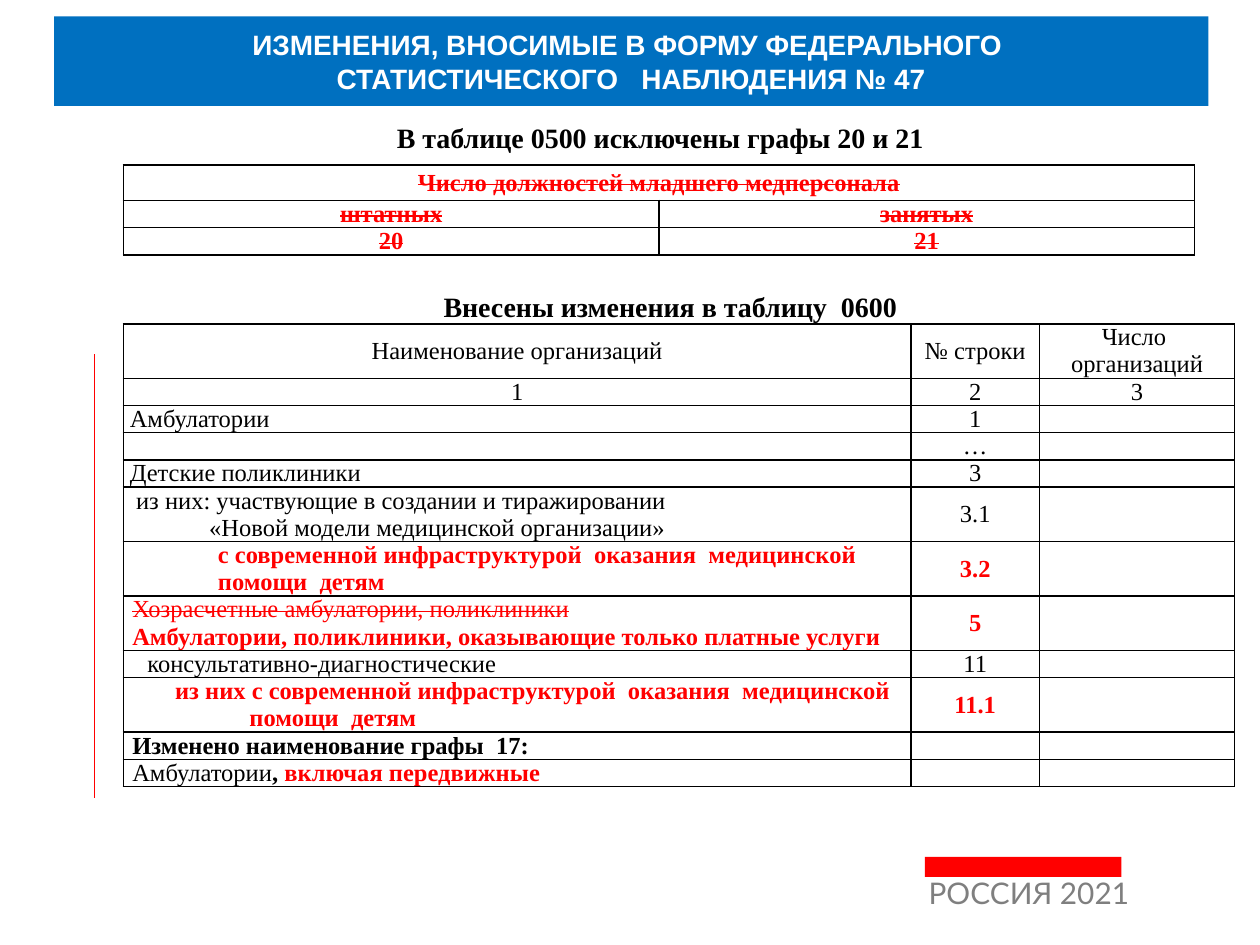
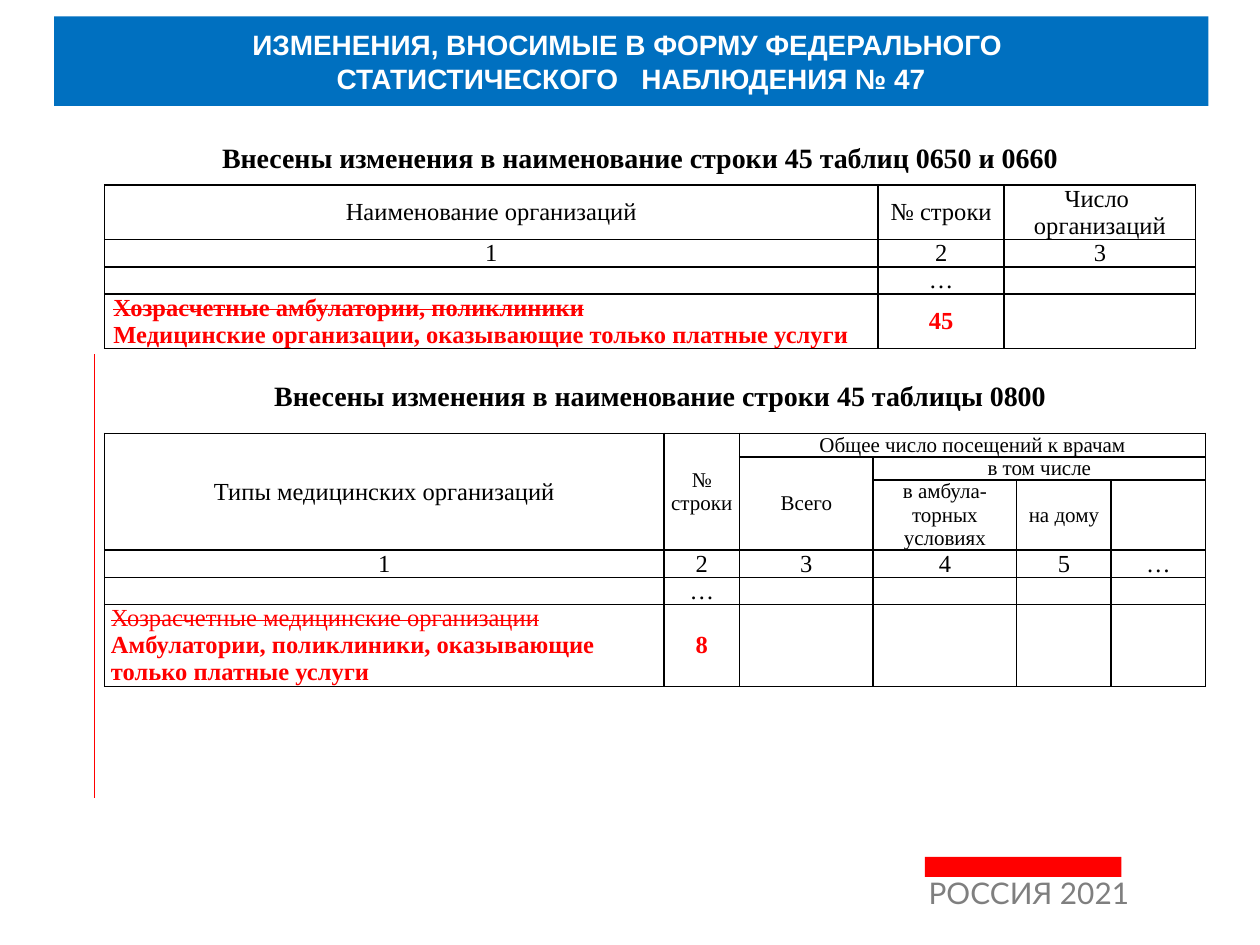
from dataclasses import dataclass
from lxml import etree
from pptx import Presentation
from pptx.dml.color import RGBColor
from pptx.enum.shapes import MSO_CONNECTOR, MSO_SHAPE
from pptx.enum.text import MSO_ANCHOR, MSO_AUTO_SIZE, PP_ALIGN
from pptx.oxml.ns import qn
from pptx.util import Inches, Pt

LEFT, CENTER = PP_ALIGN.LEFT, PP_ALIGN.CENTER
MIDDLE = MSO_ANCHOR.MIDDLE
NO_AUTOFIT = MSO_AUTO_SIZE.NONE
RECTANGLE = MSO_SHAPE.RECTANGLE
STRAIGHT = MSO_CONNECTOR.STRAIGHT


@dataclass(frozen=True)
class Theme:
    blue: str = "0070C0"
    red: str = "FF0000"
    black: str = "000000"
    white: str = "FFFFFF"
    gray: str = "7F7F7F"
    title_font: str = "Arial"
    body_font: str = "Times New Roman"
    footer_font: str = "Lato"
    title_size: float = 16
    footer_size: float = 17
    cell_size: float = 14
    small_size: float = 12
    empty_size: float = 10
    line_pitch: float = 1.11
    rule_width: float = 0.75
    border_width: float = 1


THEME = Theme()

# Text styles used inside the tables: colour, bold, struck out
STYLES = {
    "plain": (THEME.black, False, False),
    "strong": (THEME.black, True, False),
    "added": (THEME.red, True, False),
    "removed": (THEME.red, False, True),
    "removed_bold": (THEME.red, True, True),
}

# Least row heights; rows grow to fit their text
ONE_LINE, TWO_LINES, THREE_LINES = 0.21, 0.43, 0.64
SMALL_LINE, SMALL_THREE_LINES = 0.18, 0.55


@dataclass
class Line:
    spans: list
    indent: float = 0


@dataclass
class Cell:
    lines: list
    align: PP_ALIGN = CENTER
    margin: float = 0.05
    size: float = THEME.cell_size


def line(text, style="plain", indent=0):
    return Line([(text, style)], indent)


def label(*lines, margin=0.07):
    return Cell(list(lines), LEFT, margin)


def centered(*texts, style="plain", **format_values):
    return Cell([line(text, style) for text in texts], **format_values)


def small(*texts, margin=0.05):
    return centered(*texts, margin=margin, size=THEME.small_size)


def numbers(*texts):
    return [centered(text) for text in texts]


# ---- Shared helpers ----
def apply(target, values):
    for name, value in values.items():
        setattr(target, name, value)


def inches(box):
    return [Inches(value) for value in box]


def place(shape, box):
    apply(shape, dict(zip(("left", "top", "width", "height"), inches(box))))


def add_span(para, text, font, size, color, bold=False):
    span = para.add_run()
    span.text = text
    apply(span.font, {"name": font, "size": Pt(size), "bold": bold})
    span.font.color.rgb = RGBColor.from_string(color)
    return span


def set_fill(shape, color):
    shape.fill.solid()
    shape.fill.fore_color.rgb = RGBColor.from_string(color)
    shape.line.fill.background()


# ---- Page frame ----
def add_title(page, box):
    title = page.shapes.title
    place(title, box)
    set_fill(title, THEME.blue)
    frame = title.text_frame
    apply(frame, {"word_wrap": True, "auto_size": NO_AUTOFIT, "vertical_anchor": MIDDLE})
    for index, text in enumerate(("ИЗМЕНЕНИЯ, ВНОСИМЫЕ В ФОРМУ ФЕДЕРАЛЬНОГО ",
                                  "СТАТИСТИЧЕСКОГО   НАБЛЮДЕНИЯ № 47")):
        para = frame.add_paragraph() if index else frame.paragraphs[0]
        para.alignment = CENTER
        add_span(para, text, THEME.title_font, THEME.title_size, THEME.white, True)


def add_footer(page, box):
    left, top, width, height = box
    # Red band above the caption
    band = page.shapes.add_shape(RECTANGLE, *inches((left + 0.07, top, 1.56, 0.16)))
    band.shadow.inherit = False
    set_fill(band, THEME.red)
    # Caption
    caption = page.placeholders[1]
    place(caption, (left, top + 0.15, width, height - 0.15))
    apply(caption.text_frame, {"word_wrap": True, "auto_size": NO_AUTOFIT})
    para = caption.text_frame.paragraphs[0]
    apply(para, {"alignment": LEFT, "line_spacing": 0.8})
    add_span(para, "РОССИЯ 2021", THEME.footer_font, THEME.footer_size, THEME.gray)


def add_side_rule(page, left, top, bottom):
    x = Inches(left)
    rule = page.shapes.add_connector(STRAIGHT, x, Inches(top), x, Inches(bottom))
    rule.line.color.rgb = RGBColor.from_string(THEME.red)
    rule.line.width = Pt(THEME.rule_width)
    etree.SubElement(rule._element.spPr, qn("a:effectLst"))


def add_page(deck):
    page = deck.slides.add_slide(deck.slide_layouts[0])
    add_title(page, (0.43, 0.13, 9.16, 0.71))
    add_footer(page, (7.27, 6.8, 1.88, 0.62))
    add_side_rule(page, 0.75, 2.81, 6.33)
    return page


def add_heading(page, text, left, top):
    box = page.shapes.add_textbox(*inches((left, top, 8.98, 0.32)))
    frame = box.text_frame
    apply(frame, {"word_wrap": True, "vertical_anchor": MIDDLE})
    para = frame.paragraphs[0]
    para.alignment = CENTER
    add_span(para, text, THEME.body_font, THEME.title_size, THEME.black, True)


# ---- Tables ----
def add_borders(cell):
    properties = cell._tc.get_or_add_tcPr()
    for index, side in enumerate(("lnL", "lnR", "lnT", "lnB")):
        border = etree.Element(qn(f"a:{side}"), w=str(Pt(THEME.border_width)))
        fill = etree.SubElement(border, qn("a:solidFill"))
        etree.SubElement(fill, qn("a:srgbClr"), val=THEME.black)
        properties.insert(index, border)


def write_cell(cell, content):
    margin = Inches(content.margin if content else 0)
    apply(cell, {"margin_left": margin, "margin_right": margin, "margin_top": 0,
                 "margin_bottom": 0, "vertical_anchor": MIDDLE})
    cell.fill.background()
    add_borders(cell)
    frame = cell.text_frame
    if not content:
        etree.SubElement(frame.paragraphs[0]._p, qn("a:endParaRPr"),
                         sz=str(int(THEME.empty_size * 100)))
        return
    for index, item in enumerate(content.lines):
        para = frame.add_paragraph() if index else frame.paragraphs[0]
        apply(para, {"alignment": content.align,
                     "line_spacing": Pt(content.size * THEME.line_pitch)})
        if item.indent:
            para._p.get_or_add_pPr().set("marL", str(Inches(item.indent)))
        for text, style in item.spans:
            color, bold, struck = STYLES[style]
            span = add_span(para, text, THEME.body_font, content.size, color, bold)
            if struck:
                span._r.get_or_add_rPr().set("strike", "sngStrike")


def add_grid(page, left, top, widths, heights, rows, merges=()):
    box = inches((left, top, sum(widths), sum(heights)))
    table = page.shapes.add_table(len(heights), len(widths), *box).table
    apply(table, {"first_row": False, "horz_banding": False})
    for column, width in zip(table.columns, widths):
        column.width = Inches(width)
    for row, height in zip(table.rows, heights):
        row.height = Inches(height)
    for first_row, first_column, last_row, last_column in merges:
        table.cell(first_row, first_column).merge(table.cell(last_row, last_column))
    for row, contents in zip(table.rows, rows):
        for cell, content in zip(row.cells, contents):
            write_cell(cell, content)


def organization_header():
    return [
        [centered("Наименование организаций"), centered("№ строки"),
         centered("Число ", "организаций")],
        numbers("1", "2", "3"),
    ]


# ---- Slides ----
def build_tables_0500_0600(deck):
    page = add_page(deck)

    # Table 0500: removed columns
    add_heading(page, "В таблице 0500 исключены графы 20 и 21", 0.75, 0.93)
    removed = [["Число должностей младшего медперсонала", None],
               ["штатных", "занятых"], ["20", "21"]]
    rows = [[centered(text, style="removed_bold", margin=0.07) if text else None
             for text in row] for row in removed]
    add_grid(page, 0.98, 1.31, [4.25] * 2, [0.28, ONE_LINE, ONE_LINE], rows, [(0, 0, 0, 1)])

    # Table 0600: changed rows
    add_heading(page, "Внесены изменения в таблицу  0600", 0.83, 2.27)
    changes = [
        (label(line("Амбулатории"), margin=0.05), centered("1")),
        (None, centered("…")),
        (label(line("Детские поликлиники"), margin=0.05), centered("3")),
        (label(line("из них: участвующие в создании и тиражировании", indent=0.05),
               line("«Новой модели медицинской организации»", indent=0.63), margin=0.05),
         centered("3.1")),
        (label(line("с современной инфраструктурой  оказания  медицинской", "added", 0.68),
               line("помощи  детям", "added", 0.68)), centered("3.2", style="added")),
        (label(line("Хозрасчетные амбулатории, поликлиники", "removed"),
               line("Амбулатории, поликлиники, оказывающие только платные услуги", "added")),
         centered("5", style="added")),
        (label(line("консультативно-диагностические", indent=0.12)), centered("11")),
        (label(line("из них с современной инфраструктурой  оказания  медицинской",
                    "added", 0.34),
               line("помощи  детям", "added", 0.93)), centered("11.1", style="added")),
        (label(line("Изменено наименование графы  17:", "strong")), None),
        (label(Line([("Амбулатории", "plain"), (", ", "strong"),
                     ("включая передвижные", "added")])), None),
    ]
    rows = organization_header() + [[name, number, None] for name, number in changes]
    heights = [TWO_LINES if any(cell and len(cell.lines) == 2 for cell in row) else ONE_LINE
               for row in rows]
    add_grid(page, 0.98, 2.57, [6.25, 1.02, 1.55], heights, rows)


def build_tables_0650_0800(deck):
    page = add_page(deck)

    # Tables 0650 and 0660: renamed row
    add_heading(page, "Внесены изменения в наименование строки 45 таблиц 0650 и 0660", 0.59, 1.09)
    rows = organization_header() + [
        [None, centered("…"), None],
        [label(line("Хозрасчетные амбулатории, поликлиники", "removed_bold"),
               line("Медицинские организации, оказывающие только платные услуги", "added")),
         centered("45", style="added"), None],
    ]
    add_grid(page, 0.83, 1.47, [6.14, 1, 1.52],
             [TWO_LINES, ONE_LINE, ONE_LINE, TWO_LINES], rows)

    # Table 0800: renamed row under a merged header
    add_heading(page, "Внесены изменения в наименование строки 45 таблицы 0800", 0.75, 2.98)
    rows = [
        [centered("Типы медицинских организаций"), small("№ строки", margin=0.02),
         small("Общее число посещений к врачам")] + [None] * 3,
        [None, None, small("Всего"), small("в том числе"), None, None],
        [None] * 3 + [small("в амбула-торных", "условиях"), small("на дому"), None],
        numbers("1", "2", "3", "4", "5", "…"),
        [None, centered("…")] + [None] * 4,
        [label(line("Хозрасчетные медицинские организации", "removed"),
               line("Амбулатории, поликлиники, оказывающие только платные услуги", "added"),
               margin=0.05), centered("8", style="added")] + [None] * 4,
    ]
    heights = [SMALL_LINE, SMALL_LINE, SMALL_THREE_LINES, ONE_LINE, ONE_LINE, THREE_LINES]
    merges = [(0, 0, 2, 0), (0, 1, 2, 1), (0, 2, 0, 5), (1, 2, 2, 2), (1, 3, 1, 5)]
    add_grid(page, 0.83, 3.44, [4.44, 0.6, 1.06, 1.14, 0.75, 0.75], heights, rows, merges)


def main():
    deck = Presentation()
    apply(deck, {"slide_width": Inches(10), "slide_height": Inches(7.5)})
    build_tables_0500_0600(deck)
    build_tables_0650_0800(deck)
    deck.save("out.pptx")


if __name__ == "__main__":
    main()
